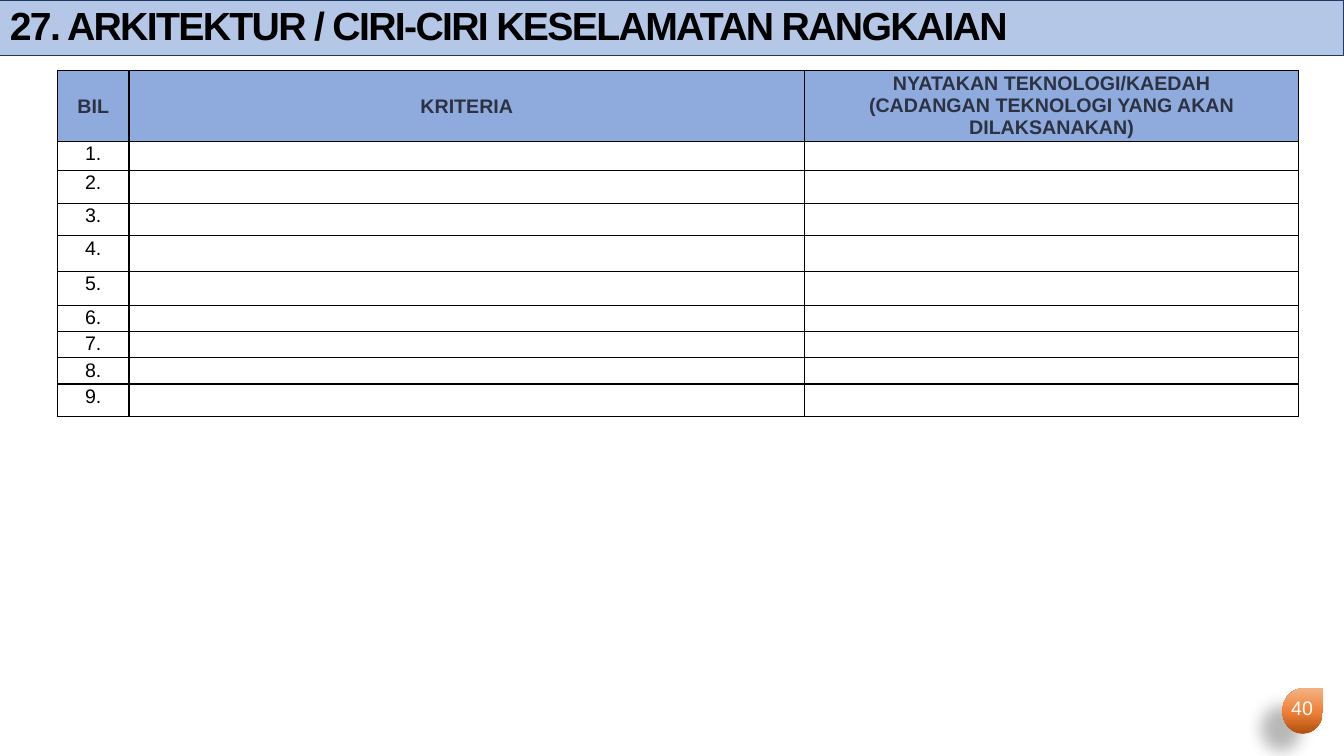
from lxml import etree
from pptx import Presentation
from pptx.dml.color import RGBColor
from pptx.enum.shapes import MSO_SHAPE
from pptx.enum.text import MSO_ANCHOR, PP_ALIGN
from pptx.oxml import parse_xml
from pptx.util import Inches, Pt

NS = 'xmlns:a="http://schemas.openxmlformats.org/drawingml/2006/main"'


def color(hex_value):
    return RGBColor.from_string(hex_value)


def write(frame, text, size=14, hex_value="000000", bold=False, align=PP_ALIGN.CENTER,
          anchor=MSO_ANCHOR.TOP, line_spacing=None, space_after=0, tracking=None):
    frame.word_wrap = True
    frame.vertical_anchor = anchor
    for i, line in enumerate(text.split("\n")):
        paragraph = frame.paragraphs[0] if i == 0 else frame.add_paragraph()
        paragraph.alignment = align
        paragraph.line_spacing = line_spacing
        paragraph.space_after = Pt(space_after)
        if not line:
            # An empty cell keeps its row as low as a written one
            paragraph._p.get_or_add_endParaRPr().set("sz", str(size * 100))
            continue
        run = paragraph.add_run()
        run.text = line
        run.font.name = "Arial"
        run.font.size = Pt(size)
        run.font.bold = bold
        run.font.color.rgb = color(hex_value)
        if tracking:
            run.font._element.set("spc", str(int(tracking * 100)))


prs = Presentation()
prs.slide_width, prs.slide_height = Inches(13.33), Inches(7.5)
slide = prs.slides.add_slide(prs.slide_layouts[6])

# Page number badge: gradient teardrop with a soft shadow
badge = slide.shapes.add_shape(MSO_SHAPE.TEAR, Inches(12.72), Inches(6.83),
                               Inches(0.4), Inches(0.45))
badge.line.fill.background()
badge.fill.gradient()
gradient = badge.fill._fill._gradFill
stops = "".join(f'<a:gs pos="{pos * 1000}"><a:srgbClr val="{value}"/></a:gs>'
                for pos, value in [(0, "B0500F"), (48, "EE8137"), (100, "F4B183")])
gradient.getparent().replace(gradient, parse_xml(
    f'<a:gradFill {NS} rotWithShape="1"><a:gsLst>{stops}</a:gsLst>'
    '<a:lin ang="16200000" scaled="0"/></a:gradFill>'))
badge._element.spPr.append(parse_xml(
    f'<a:effectLst {NS}><a:outerShdw blurRad="{Pt(11.8)}" dist="{Pt(19.7)}" '
    f'dir="{141 * 60000}" algn="ctr" rotWithShape="0"><a:srgbClr val="000000">'
    '<a:alpha val="28000"/></a:srgbClr></a:outerShdw></a:effectLst>'))

page_number = slide.shapes.add_textbox(Inches(12.67), Inches(6.86), Inches(0.49), Inches(0.4))
write(page_number.text_frame, "40", hex_value="FFFFFF")

# Title band
title = slide.shapes.add_shape(MSO_SHAPE.RECTANGLE, 0, 0, prs.slide_width, Inches(0.55))
title.shadow.inherit = False
title.fill.solid()
title.fill.fore_color.rgb = color("B4C7E7")
title.line.color.rgb = color("203864")
title.line.width = Pt(0.75)
write(title.text_frame, "27. ARKITEKTUR / CIRI-CIRI KESELAMATAN RANGKAIAN", size=28, bold=True,
      align=PP_ALIGN.LEFT, anchor=MSO_ANCHOR.MIDDLE, line_spacing=0.9, tracking=-1.2)

# Criteria table: a header and nine numbered rows to fill in
headings = ["BIL", "KRITERIA",
            "NYATAKAN TEKNOLOGI/KAEDAH\n(CADANGAN TEKNOLOGI YANG AKAN DILAKSANAKAN)"]
column_widths = [0.71, 6.7, 4.9]
row_heights = [0.7, 0.29, 0.33, 0.32, 0.35, 0.34, 0.26, 0.26, 0.26, 0.32]
rows = [headings] + [[f"{n}.", "", ""] for n in range(1, len(row_heights))]

criteria = slide.shapes.add_table(len(rows), len(headings), Inches(0.57), Inches(0.7),
                                  Inches(sum(column_widths)), Inches(sum(row_heights))).table
for column, width in zip(criteria.columns, column_widths):
    column.width = Inches(width)

for r, (texts, height) in enumerate(zip(rows, row_heights)):
    criteria.rows[r].height = Inches(height)
    for c, text in enumerate(texts):
        cell = criteria.cell(r, c)
        cell.margin_left = cell.margin_right = Inches(0.06)
        cell.margin_top = cell.margin_bottom = 0
        header = r == 0
        two_part = "\n" in text
        write(cell.text_frame, text, bold=header, hex_value="2C3242" if header else "000000",
              line_spacing=None if two_part else 1.07, space_after=0 if two_part else 8)
        cell.vertical_anchor = MSO_ANCHOR.MIDDLE if header else MSO_ANCHOR.TOP
        # Borders come before the fill in the cell properties
        for side in ("lnL", "lnR", "lnT", "lnB"):
            cell._tc.get_or_add_tcPr().append(etree.fromstring(
                f'<a:{side} {NS} w="{Pt(1)}"><a:solidFill><a:srgbClr val="000000"/>'
                f'</a:solidFill></a:{side}>'))
        if header:
            cell.fill.solid()
            cell.fill.fore_color.rgb = color("8FAADC")
        else:
            cell.fill.background()

prs.save("out.pptx")
